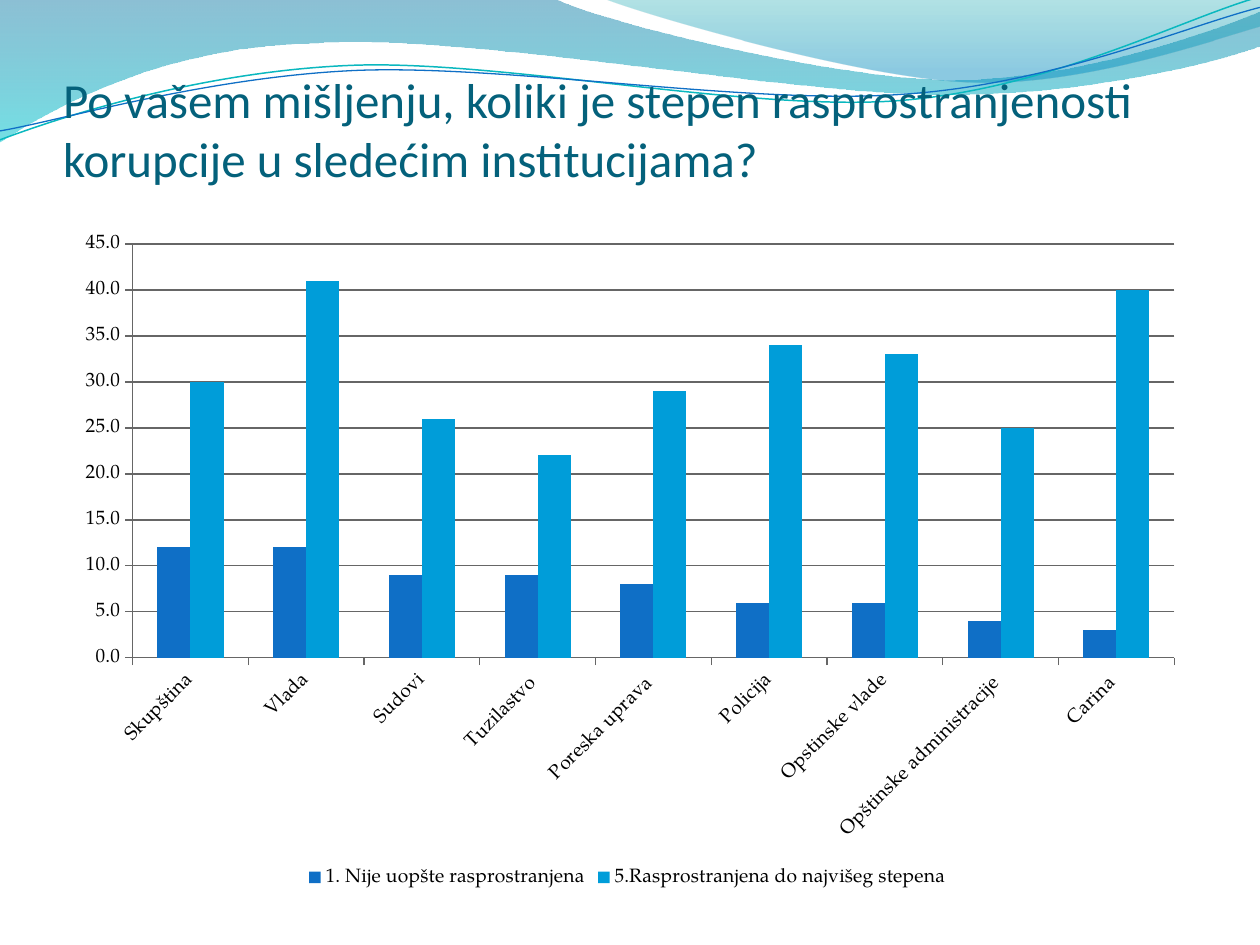
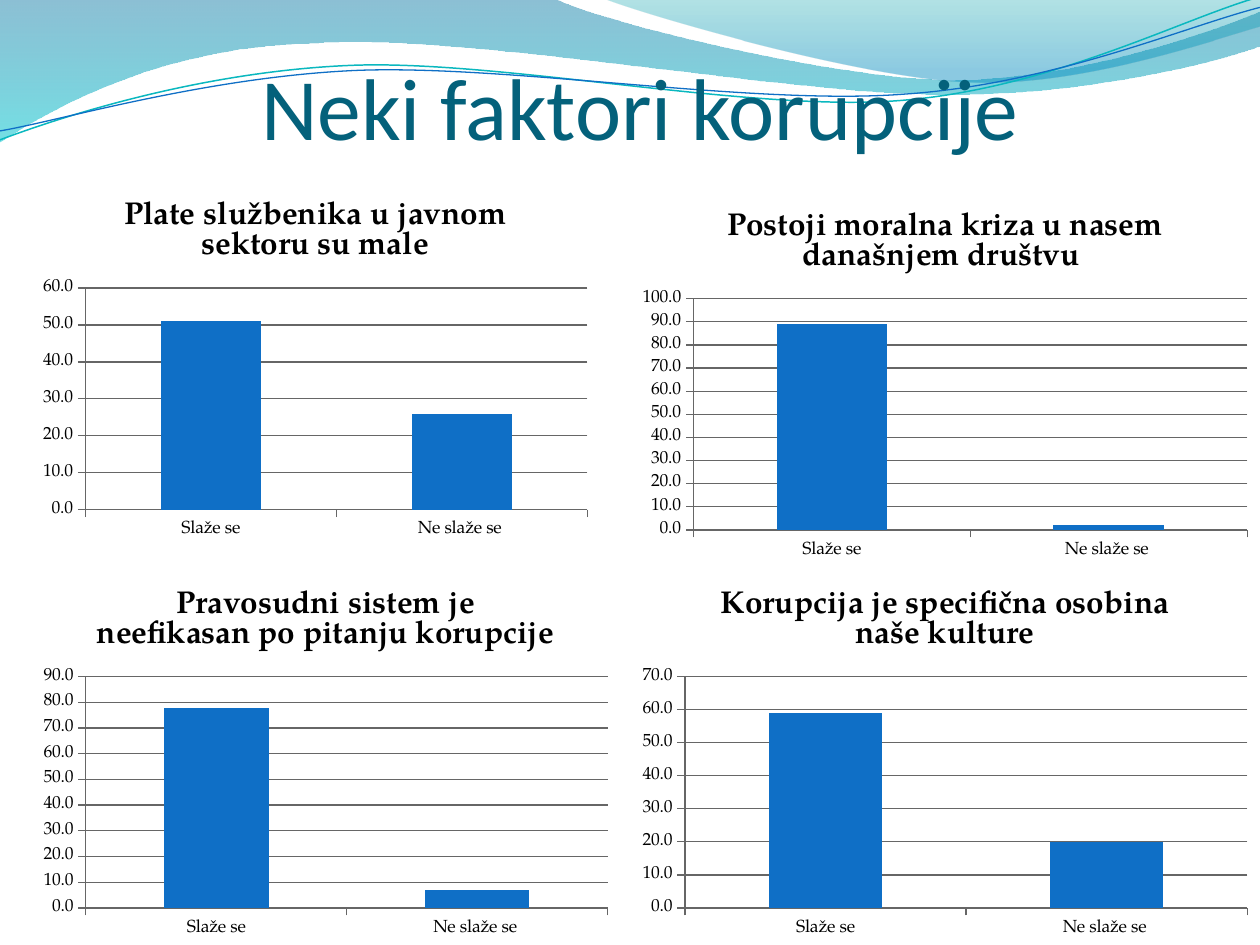
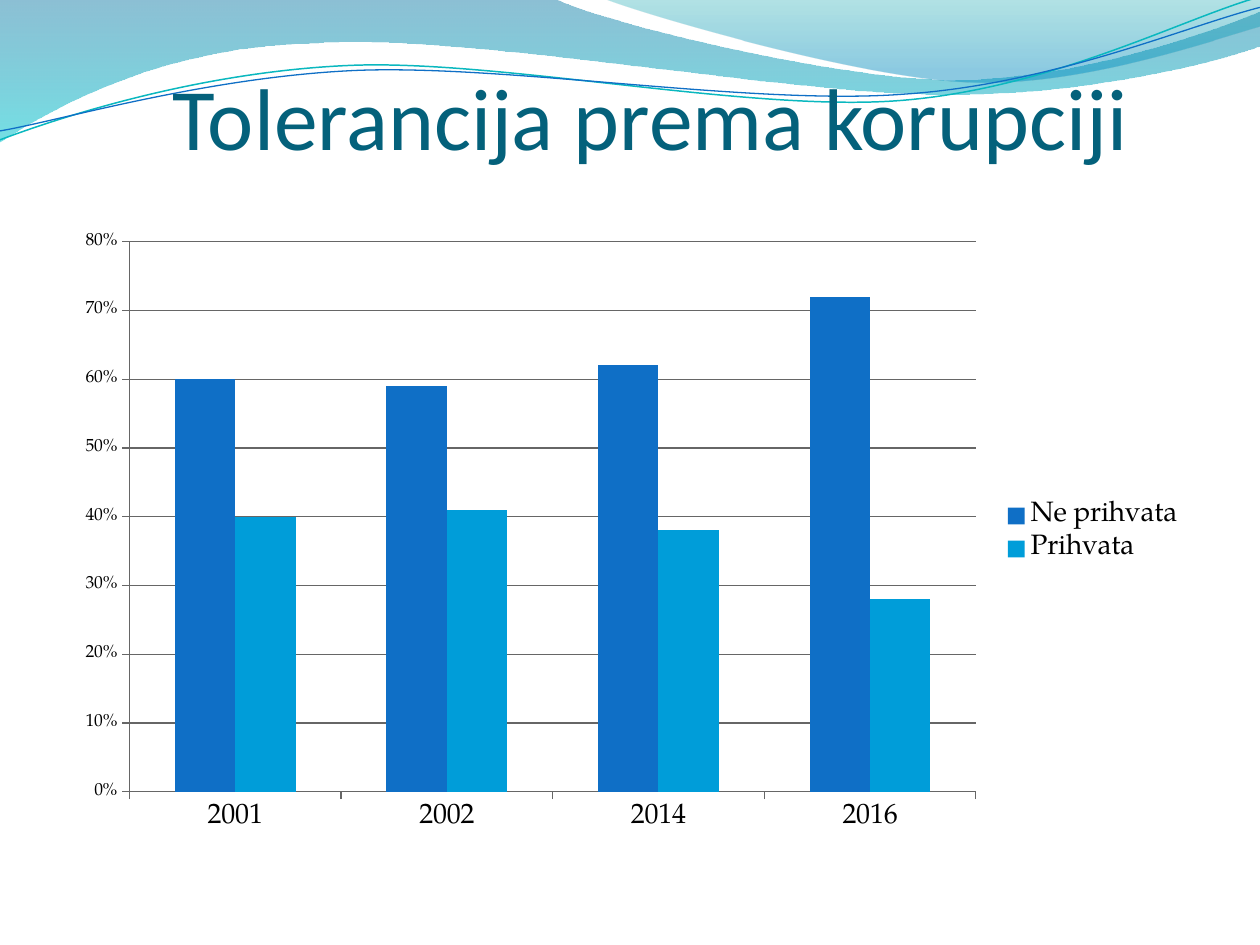
from lxml.etree import SubElement
from pptx import Presentation
from pptx.chart.data import CategoryChartData
from pptx.dml.color import RGBColor
from pptx.enum.chart import XL_CHART_TYPE, XL_LEGEND_POSITION, XL_TICK_MARK
from pptx.enum.text import MSO_ANCHOR, MSO_AUTO_SIZE, PP_ALIGN
from pptx.oxml.ns import qn
from pptx.util import Cm, Pt

TITLE_COLOR = RGBColor(0x04, 0x61, 0x7B)
BLUE = RGBColor(0x0F, 0x6F, 0xC6)
SKY = RGBColor(0x00, 0x9D, 0xD9)
TEAL = RGBColor(0x0A, 0xB8, 0xBF)
BLACK = RGBColor(0x00, 0x00, 0x00)
AXIS_GRAY = RGBColor(0x66, 0x66, 0x66)
SERIES_COLORS = (BLUE, SKY)

TITLE_FONT = "Calibri"
CHART_FONT = "TeX Gyre Pagella"
UNITS_PER_CM = 100

BANDS = [
    ([(0, 0), (11.18, -0.03),
      (12.09, 0.43, 16.87, 1.6, 19.25, 1.6),
      (21.67, 1.6, 24.33, 0.66, 25.4, 0.23), (25.43, 0.91),
      (24.97, 1.12, 22.1, 1.93, 18.95, 1.9),
      (15.8, 1.9, 9.7, 0.71, 6.53, 0.86),
      (3.28, 0.91, 1.17, 2.11, -0.03, 2.87)],
     [(0, RGBColor(0x00, 0x74, 0xA1), 45), (1, RGBColor(0x00, 0xC6, 0xCF), 55)]),
    ([(12.17, -0.03),
      (12.93, 0.28, 17.32, 1.57, 19.53, 1.65),
      (21.74, 1.75, 24.41, 0.81, 25.4, 0.53), (25.4, 0)],
     [(0, RGBColor(0x00, 0xA1, 0xA9), 30), (0.8, RGBColor(0x00, 0x8B, 0xBF), 45)]),
]

WAVES = [
    ([(0, 2.82),
      (1.22, 2.36, 4.01, 1.45, 7.04, 1.32),
      (10.03, 1.19, 15.06, 2.26, 18.11, 2.03),
      (21.16, 1.8, 23.83, 0.38, 25.35, -0.05)], TEAL, 0.85),
    ([(0, 2.64),
      (1.19, 2.44, 4.17, 1.55, 7.19, 1.42),
      (10.24, 1.3, 15.16, 2.13, 18.21, 1.9),
      (21.23, 1.7, 23.9, 0.53, 25.4, 0.15)], BLUE, 0.75),
]

INSTITUTIONS = ["Skupština", "Vlada", "Sudovi", "Tuzilastvo ", "Poreska uprava ",
                "Policija", "Opstinske vlade", "Opštinske administracije ", "Carina "]
INSTITUTION_SERIES = {
    "1. Nije uopšte rasprostranjena": [12, 12, 9, 9, 8, 6, 6, 4, 3],
    "5.Rasprostranjena do najvišeg stepena ": [30, 41, 26, 22, 29, 34, 33, 25, 40],
}

OPINIONS = ["Slaže se", "Ne slaže se "]
FACTORS = [
    ("Plate službenika u javnom sektoru su male", [51, 26], (0.64, 3.6, 11.43, 7.42)),
    ("Postoji moralna kriza u nasem današnjem društvu ", [89, 2], (12.7, 3.81, 12.7, 7.62)),
    ("Pravosudni sistem je neefikasan po pitanju korupcije", [78, 7],
     (0.64, 11.43, 11.85, 7.62)),
    ("Korupcija je specifična osobina naše kulture", [59, 20], (12.7, 11.43, 12.7, 7.62)),
]

YEARS = ["2001", "2002", "2014", "2016"]
TOLERANCE_SERIES = {
    "Ne prihvata": [0.6, 0.59, 0.62, 0.72],
    "Prihvata": [0.4, 0.41, 0.38, 0.28],
}


def apply_format(target, values):
    """Set each attribute of the target from a dict."""
    for name, value in values.items():
        setattr(target, name, value)


def split_points(segment):
    """Split a flat segment into points in drawing units."""
    return [tuple(round(value * UNITS_PER_CM) for value in segment[index:index + 2])
            for index in range(0, len(segment), 2)]


def bend_lines(shape, segments):
    """Turn each group of three lines that stands for a curve into a cubic curve."""
    lines = iter(list(shape.element.iter(qn("a:lnTo"))))
    for segment in segments:
        group = [next(lines) for _ in split_points(segment)]
        if len(group) == 3:
            outline = group[0].getparent()
            curve = SubElement(outline, qn("a:cubicBezTo"))
            outline.replace(group[0], curve)
            for line in group:
                curve.append(line[0])
            for line in group[1:]:
                outline.remove(line)


def add_outline(slide, segments, close):
    """Draw a freeform from points and curves given in centimetres."""
    start, *rest = segments
    builder = slide.shapes.build_freeform(*split_points(start)[0],
                                          scale=Cm(1) / UNITS_PER_CM)
    points = [point for segment in rest for point in split_points(segment)]
    builder.add_line_segments(points, close=close)
    shape = builder.convert_to_shape()
    bend_lines(shape, rest)
    shape.shadow.inherit = False
    return shape


def add_band(slide, segments, stops):
    """Draw a wave band with a translucent vertical gradient."""
    shape = add_outline(slide, segments, True)
    shape.line.fill.background()
    shape.fill.gradient()
    shape.fill.gradient_angle = 270
    for gradient_stop, (position, color, _) in zip(shape.fill.gradient_stops, stops):
        gradient_stop.position = position
        gradient_stop.color.rgb = color
    for element, (_, _, opacity) in zip(shape.element.iter(qn("a:srgbClr")), stops):
        SubElement(element, qn("a:alpha")).set("val", str(opacity * 1000))
    return shape


def add_wave(slide, segments, color, width):
    """Draw a thin open wave line."""
    shape = add_outline(slide, segments, False)
    shape.fill.background()
    shape.line.color.rgb = color
    shape.line.width = Pt(width)
    return shape


def decorate_layout(layout, slide):
    """Draw the waves on a slide and move them behind the layout content."""
    shapes = [add_band(slide, *band) for band in BANDS]
    shapes += [add_wave(slide, *wave) for wave in WAVES]
    for index, shape in enumerate(shapes, start=2):
        layout.shapes.element.insert(index, shape.element)


def set_title(slide, text, left, top, size, alignment, bottom=0):
    """Place and format the title placeholder."""
    title = slide.shapes.title
    apply_format(title, {"left": Cm(left), "top": Cm(top),
                         "width": Cm(22.86), "height": Cm(3.18)})
    frame = title.text_frame
    frame.text = text
    apply_format(frame, {"word_wrap": True, "auto_size": MSO_AUTO_SIZE.NONE,
                         "vertical_anchor": MSO_ANCHOR.BOTTOM,
                         "margin_left": 0, "margin_right": 0,
                         "margin_top": Cm(0.13), "margin_bottom": Cm(bottom)})
    paragraph = frame.paragraphs[0]
    paragraph.alignment = alignment
    apply_format(paragraph.font, {"name": TITLE_FONT, "size": Pt(size)})
    paragraph.font.color.rgb = TITLE_COLOR


def style_font(font, size, bold=False):
    """Format chart text."""
    apply_format(font, {"name": CHART_FONT, "size": Pt(size), "bold": bold})
    font.color.rgb = BLACK


def style_line(line):
    """Format an axis line or a gridline."""
    line.color.rgb = AXIS_GRAY
    line.width = Pt(0.75)


def add_column_chart(slide, box, categories, series, number_format="0.0", size=10,
                     category_size=None):
    """Add a clustered column chart in the shared style."""
    data = CategoryChartData(number_format=number_format)
    data.categories = categories
    for name, values in series.items():
        data.add_series(name, values)
    frame = slide.shapes.add_chart(XL_CHART_TYPE.COLUMN_CLUSTERED, *map(Cm, box), data)
    chart = frame.chart
    apply_format(chart, {"has_title": False, "has_legend": False})
    style_font(chart.font, size)
    plot = chart.plots[0]
    apply_format(plot, {"gap_width": 150, "overlap": 0, "vary_by_categories": False})
    for column, color in zip(plot.series, SERIES_COLORS):
        column.format.fill.solid()
        column.format.fill.fore_color.rgb = color
    for axis in (chart.category_axis, chart.value_axis):
        axis.major_tick_mark = XL_TICK_MARK.OUTSIDE
        style_line(axis.format.line)
    style_font(chart.category_axis.tick_labels.font, category_size or size)
    chart.value_axis.has_major_gridlines = True
    style_line(chart.value_axis.major_gridlines.format.line)
    apply_format(chart.value_axis.tick_labels,
                 {"number_format": number_format, "number_format_is_linked": False})
    return chart


def add_legend(chart, position, size):
    """Show the legend beside the plot."""
    chart.has_legend = True
    apply_format(chart.legend, {"position": position, "include_in_layout": False})
    style_font(chart.legend.font, size)


def add_chart_title(chart, text):
    """Show a bold heading above the plot."""
    chart.has_title = True
    frame = chart.chart_title.text_frame
    frame.text = text
    style_font(frame.paragraphs[0].runs[0].font, 18, bold=True)


def main():
    """Build the three slides and save them."""
    presentation = Presentation()
    apply_format(presentation, {"slide_width": Cm(25.4), "slide_height": Cm(19.05)})
    layout = presentation.slide_layouts[5]
    institutions, factors, tolerance = [presentation.slides.add_slide(layout)
                                        for _ in range(3)]
    decorate_layout(layout, institutions)

    set_title(institutions, "Po vašem mišljenju, koliki je stepen rasprostranjenosti "
              "korupcije u sledećim institucijama?", 1.27, 1.95, 28, PP_ALIGN.LEFT, 1.35)
    chart = add_column_chart(institutions, (1.27, 4.45, 22.86, 13.54), INSTITUTIONS,
                             INSTITUTION_SERIES, size=11)
    add_legend(chart, XL_LEGEND_POSITION.BOTTOM, 11)

    set_title(factors, "Neki faktori korupcije", 1.48, 0, 50, PP_ALIGN.CENTER)
    for text, values, box in FACTORS:
        chart = add_column_chart(factors, box, OPINIONS, {text: values})
        add_chart_title(chart, text)

    set_title(tolerance, "Tolerancija prema korupciji", 1.69, 0.21, 50, PP_ALIGN.CENTER)
    chart = add_column_chart(tolerance, (1.27, 4.45, 22.86, 12.57), YEARS,
                             TOLERANCE_SERIES, number_format="0%", category_size=16)
    add_legend(chart, XL_LEGEND_POSITION.RIGHT, 16)

    presentation.save("out.pptx")


if __name__ == "__main__":
    main()
